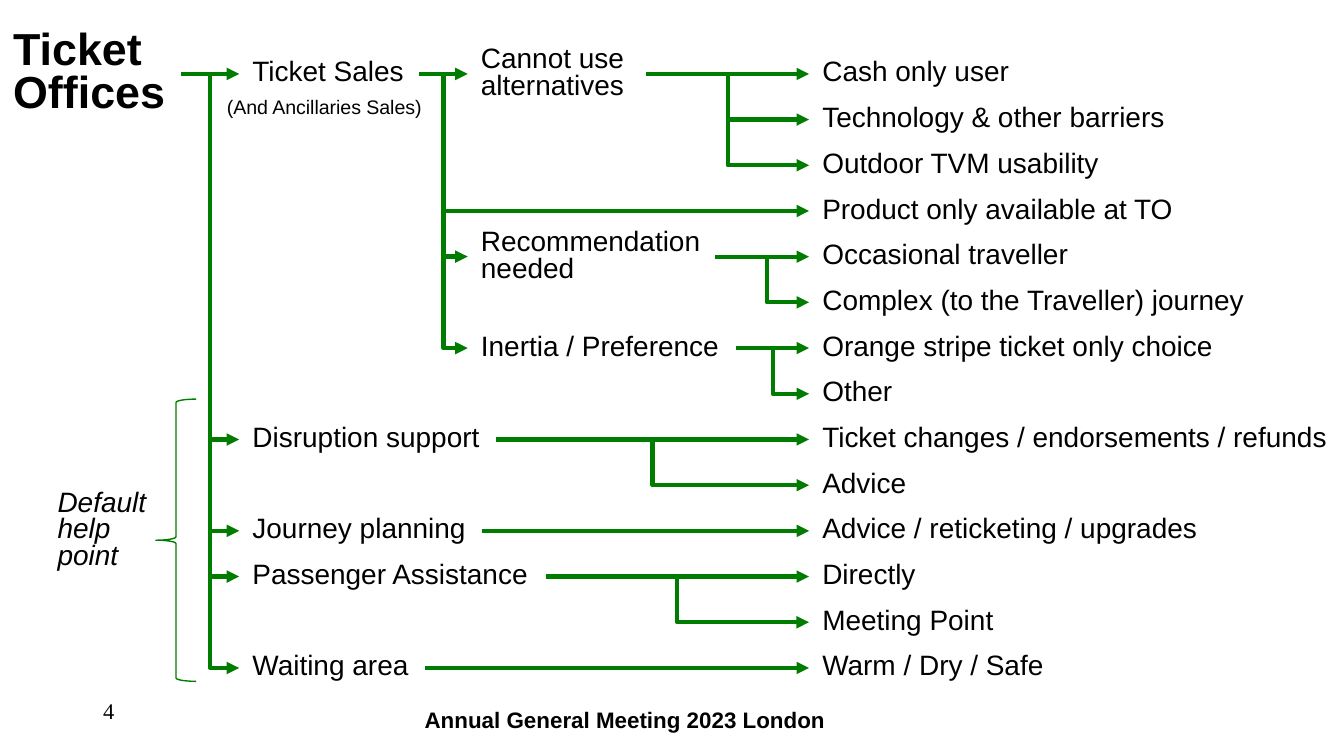
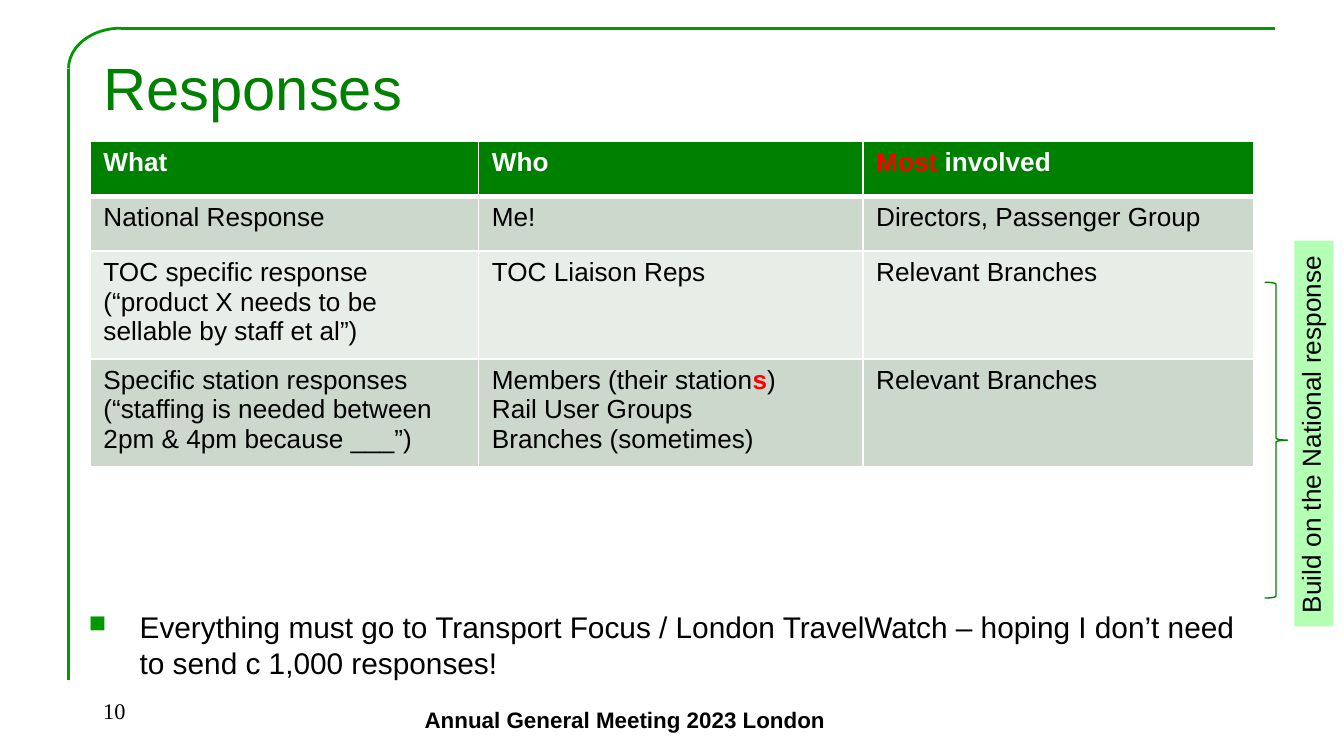
from dataclasses import dataclass

from lxml import etree
from pptx import Presentation
from pptx import util as u
from pptx.dml.color import RGBColor
from pptx.enum import shapes, text
from pptx.oxml.ns import qn

# Shared look
GREEN, DARK, FRAME = "007D00", "008000", "009900"
BLACK, WHITE, RED = "000000", "FFFFFF", "FF0000"
PALE, LIGHT, MINT = "CCD8CC", "E7EDE7", "B3FFB3"
BASE = {"name": "Arial", "size": u.Pt(15), "bold": False, "italic": False}
TIGHT = 0.8

# Flow grid: three text columns and evenly spaced rows
ONE, TWO, THREE = 1.78, 3.48, 6.02
TOP, STEP = 0.55, 0.34


@dataclass
class Node:
    words: str
    left: float
    row: float
    wide: float
    tall: float = 0.3
    size: float = 15
    bold: bool = False
    italic: bool = False
    wrap: bool = False


@dataclass
class Fan:
    start: float
    end: float
    row: int
    ends: tuple[int, ...]
    head: bool = True


@dataclass
class Run:
    words: str
    hue: str = BLACK
    bold: bool = False


NODES = [
    Node("Ticket\nOffices", 0, 0, 1.34, 0.75, size=24, bold=True),
    Node("Default\nhelp\npoint", 0.33, 10, 0.93, 0.71, italic=True),
    Node("Ticket Sales", ONE, 0, 1.34),
    Node("(And Ancillaries Sales)", 1.59, 0.76, 1.69, 0.24, size=10.5),
    Node("Disruption support", ONE, 8, 1.91),
    Node("Journey planning", ONE, 10, 1.81),
    Node("Passenger Assistance", ONE, 11, 2.27),
    Node("Waiting area", ONE, 13, 1.38),
    Node("Cannot use alternatives", TWO, 0, 1.33, 0.5, wrap=True),
    Node("Recommendation needed", TWO, 4, 1.9, 0.5, wrap=True),
    Node("Inertia / Preference", TWO, 6, 1.99),
]
LEAVES = [
    ("Cash only user", 1.61),
    ("Technology & other barriers", 2.78),
    ("Outdoor TVM usability", 2.28),
    ("Product only available at TO", 2.84),
    ("Occasional traveller", 2.05),
    ("Complex (to the Traveller) journey", 3.38),
    ("Orange stripe ticket only choice", 3.14),
    ("Other", 0.73),
    ("Ticket changes / endorsements / refunds", 4),
    ("Advice", 0.83),
    ("Advice / reticketing / upgrades", 3.02),
    ("Directly", 0.9),
    ("Meeting Point", 1.55),
    ("Warm / Dry / Safe", 1.86),
]
FANS = [
    Fan(1.35, ONE, 0, (0, 8, 10, 11, 13)),
    Fan(3.12, TWO, 0, (0, 4, 6)),
    Fan(3.12, TWO, 0, (3,), head=False),
    Fan(4.81, THREE, 0, (0, 1, 2)),
    Fan(TWO, THREE, 3, (3,)),
    Fan(5.32, THREE, 4, (4,)),
    Fan(5.39, THREE, 4, (5,)),
    Fan(5.48, THREE, 6, (6, 7)),
    Fan(3.69, THREE, 8, (8, 9)),
    Fan(3.59, THREE, 10, (10,)),
    Fan(4.06, THREE, 11, (11, 12)),
    Fan(3.16, THREE, 13, (13,)),
]

# Response table: each cell is a list of paragraphs, each a list of runs
ROWS = [
    [[[Run("What", WHITE, True)]],
     [[Run("Who", WHITE, True)]],
     [[Run("Most", RED, True), Run(" involved", WHITE, True)]]],
    [[[Run("National Response")]],
     [[Run("Me!")]],
     [[Run("Directors, Passenger Group")]]],
    [[[Run("TOC specific response (“product X needs to be sellable by staff et al”)")]],
     [[Run("TOC Liaison Reps")]],
     [[Run("Relevant Branches")]]],
    [[[Run("Specific station responses (“staffing is needed between 2pm & 4pm because ___”)")]],
     [[Run("Members (their station"), Run("s", RED, True), Run(")")],
      [Run("Rail User Groups\nBranches (sometimes)")]],
     [[Run("Relevant Branches")]]],
]
WIDTHS = [2.89, 2.86, 2.91]
FILLS = [DARK, PALE, LIGHT, PALE]


def tint(hue: str) -> RGBColor:
    return RGBColor.from_string(hue)


def paint(fill, hue: str) -> None:
    fill.solid()
    fill.fore_color.rgb = tint(hue)


def box(left: float, top: float, wide: float, tall: float) -> list:
    return [u.Inches(v) for v in (left, top, wide, tall)]


def apply(item, form: dict) -> None:
    for key, value in form.items():
        setattr(item, key, value)


def write(frame, paras: list, form: dict, gap: float = TIGHT, align=None) -> None:
    """Fill a text frame; a newline in a run is a line break."""
    for i, runs in enumerate(paras):
        para = frame.add_paragraph() if i else frame.paragraphs[0]
        apply(para, {"line_spacing": gap, "alignment": align})
        for run in runs:
            for j, part in enumerate(run.words.split("\n")):
                if j:
                    para.add_line_break()
                piece = para.add_run()
                piece.text = part
                apply(piece.font, BASE | form | {"bold": run.bold})
                piece.font.color.rgb = tint(run.hue)


def label(slide, area: tuple, run: Run, form: dict, frame: dict,
          gap: float = TIGHT, align=None):
    shape = slide.shapes.add_textbox(*box(*area))
    apply(shape.text_frame, {"word_wrap": True} | frame)
    write(shape.text_frame, [[run]], form, gap, align)
    return shape


def link(slide, start: tuple, end: tuple, hue: str, width: float, head: bool) -> None:
    kind = shapes.MSO_CONNECTOR
    way = kind.STRAIGHT if start[0] == end[0] or start[1] == end[1] else kind.ELBOW
    line = slide.shapes.add_connector(way, *box(*start, *end))
    line.line.width = u.Pt(width)
    line.line.color.rgb = tint(hue)
    props = line.element.spPr
    if head:
        etree.SubElement(props.find(qn("a:ln")), qn("a:tailEnd"), type="triangle")
    etree.SubElement(props, qn("a:effectLst"))


def outline(slide, kind, area: tuple, hue: str, width: float):
    shape = slide.shapes.add_shape(kind, *box(*area))
    shape.shadow.inherit = False
    shape.fill.background()
    shape.line.width = u.Pt(width)
    shape.line.color.rgb = tint(hue)
    return shape


def footer(slide, number: str) -> None:
    label(slide, (0.67, 5.18, 2.33, 0.32), Run(number),
          {"name": "Times New Roman", "size": u.Pt(12)}, {})
    label(slide, (2.64, 5.18, 4.02, 0.32),
          Run("Annual General Meeting 2023 London", bold=True), {"size": u.Pt(12)},
          {"vertical_anchor": text.MSO_ANCHOR.BOTTOM}, 1.0, text.PP_ALIGN.CENTER)


def level(row: float) -> float:
    return TOP + STEP * row


def flow(slide) -> None:
    # Links first, then the words
    for fan in FANS:
        for row in fan.ends:
            link(slide, (fan.start, level(fan.row)), (fan.end, level(row)),
                 GREEN, 2.25, fan.head)
    leaves = [Node(words, THREE, i, wide) for i, (words, wide) in enumerate(LEAVES)]
    for node in NODES + leaves:
        area = (node.left, level(node.row) - node.tall / 2, node.wide, node.tall)
        label(slide, area, Run(node.words, bold=node.bold),
              {"size": u.Pt(node.size), "italic": node.italic},
              {"word_wrap": node.wrap, "vertical_anchor": text.MSO_ANCHOR.MIDDLE,
               "auto_size": text.MSO_AUTO_SIZE.SHAPE_TO_FIT_TEXT})
    outline(slide, shapes.MSO_SHAPE.LEFT_BRACE, (1.16, 2.97, 0.3, 2.1), GREEN, 0.75)
    footer(slide, "4")


def edge(cell, side: str, width: float) -> None:
    props = cell._tc.get_or_add_tcPr()
    line = etree.SubElement(props, qn(f"a:ln{side}"), w=str(u.Pt(width)))
    fill = etree.SubElement(line, qn("a:solidFill"))
    etree.SubElement(fill, qn("a:srgbClr"), val=WHITE)


def grid(slide) -> None:
    area = box(0.67, 1.05, sum(WIDTHS), 3.41)
    holder = slide.shapes.add_table(len(ROWS), len(WIDTHS), *area)
    table = holder.table
    for col, wide in zip(table.columns, WIDTHS):
        col.width = u.Inches(wide)
    for i, cells in enumerate(ROWS):
        table.rows[i].height = u.Inches(0.41)
        for j, paras in enumerate(cells):
            cell = table.cell(i, j)
            for side in "LRTB":
                heavy = (i, side) in ((0, "B"), (1, "T"))
                edge(cell, side, 3 if heavy else 1)
            paint(cell.fill, FILLS[i])
            write(cell.text_frame, paras, {"size": u.Pt(14)}, 1.0)
    holder.height = area[3]


def bullet(para) -> None:
    props = para._p.get_or_add_pPr()
    hang = u.Inches(0.38)
    props.set("marL", str(hang))
    props.set("indent", str(-hang))
    hue = etree.SubElement(props, qn("a:buClr"))
    etree.SubElement(hue, qn("a:srgbClr"), val=FRAME)
    etree.SubElement(props, qn("a:buSzPct"), val="80000")
    etree.SubElement(props, qn("a:buChar"), char="■")


def replies(slide) -> None:
    # Corner frame
    for start, end in (((0.9, 0.21), (9.49, 0.21)), ((0.51, 0.51), (0.51, 5.06))):
        link(slide, start, end, FRAME, 1.5, False)
    arc = outline(slide, shapes.MSO_SHAPE.ARC, (0.51, 0.21, 0.78, 0.6), FRAME, 1.5)
    arc.adjustments[0], arc.adjustments[1] = 108, 162

    label(slide, (0.67, 0.33, 8.83, 0.53), Run("Responses", DARK),
          {"size": u.Pt(32)}, {}, 1.0)
    grid(slide)

    # Closing point
    pads = {f"margin_{side}": u.Inches(pad) for side, pad in
            (("left", 0.13), ("right", 0.13), ("top", 0.07), ("bottom", 0.07))}
    note = label(slide, (0.53, 4.46, 8.83, 0.72),
                 Run("Everything must go to Transport Focus / London TravelWatch – "
                     "hoping I don’t need to send c 1,000 responses!"),
                 {"size": u.Pt(16)}, pads, 1.0)
    bullet(note.text_frame.paragraphs[0])

    # Side brace and its upright tag
    outline(slide, shapes.MSO_SHAPE.RIGHT_BRACE, (9.41, 2.1, 0.17, 2.35), DARK, 0.75)
    tag = label(slide, (8.34, 3.08, 2.87, 0.29), Run("Build on the National response"),
                {"size": u.Pt(14)}, {"word_wrap": False})
    tag.rotation = 270
    paint(tag.fill, MINT)
    footer(slide, "10")


def main() -> None:
    deck = Presentation()
    # Widescreen, 16 to 9
    deck.slide_width, deck.slide_height = u.Inches(10), u.Inches(10 * 9 / 16)
    for draw in (flow, replies):
        draw(deck.slides.add_slide(deck.slide_layouts[6]))
    deck.save("out.pptx")


if __name__ == "__main__":
    main()
